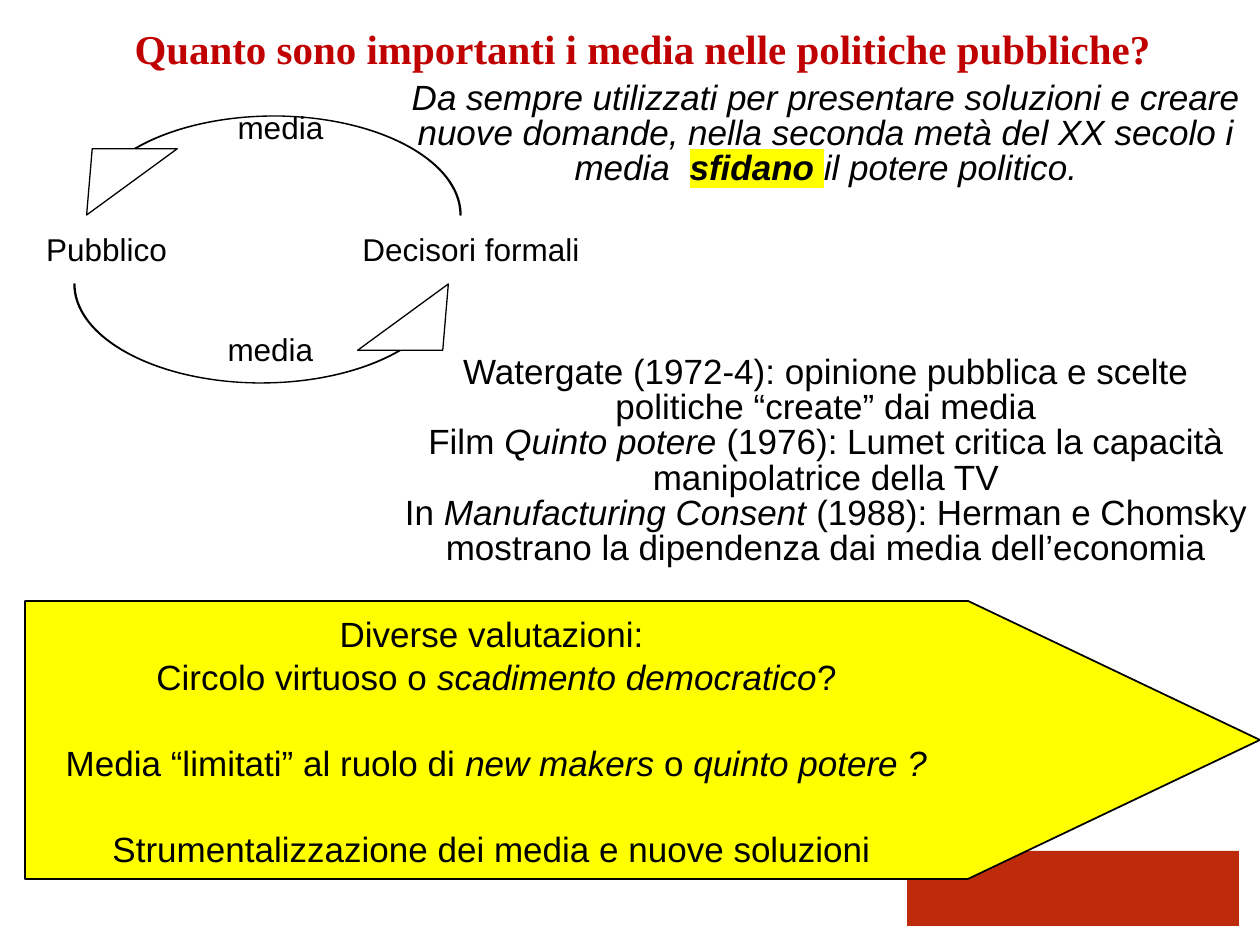
from lxml.etree import SubElement
from pptx import Presentation
from pptx.dml.color import RGBColor as RGB
from pptx.enum.shapes import MSO_SHAPE as SHAPE
from pptx.enum.text import MSO_ANCHOR as ANCHOR, PP_ALIGN as ALIGN
from pptx.oxml.ns import qn
from pptx.util import Pt

PX = 914400 / 126
COLORS = {"ink": "000000", "title": "C00000", "yellow": "FFFF00", "red": "BD2B0B"}


def px(*values):
    return [round(v * PX) for v in values]


def write(sp, paragraphs, color="ink", spacing=None, wrap=True,
          anchor=ANCHOR.TOP, **font):
    """Each paragraph is (space before in pt, [(text, style letters), ...])."""
    tf = sp.text_frame
    tf.word_wrap, tf.vertical_anchor = wrap, anchor
    for i, (before, runs) in enumerate(paragraphs):
        p = tf.paragraphs[0] if i == 0 else tf.add_paragraph()
        p.alignment = ALIGN.CENTER
        if spacing:
            p.line_spacing = spacing
        if before:
            p.space_before = Pt(before)
        for text, style in runs:
            r = p.add_run()
            r.text = text
            r.font.color.rgb = RGB.from_string(COLORS[color])
            if "h" in style:
                mark = SubElement(r.font._element, qn("a:highlight"))
                SubElement(mark, qn("a:srgbClr")).set("val", COLORS["yellow"])
            fmt = {"name": "Arial", "bold": "b" in style, "italic": "i" in style, **font}
            for key, value in fmt.items():
                setattr(r.font, key, value)


prs = Presentation()
prs.slide_width, prs.slide_height = px(1260, 945)
s = prs.slides.add_slide(prs.slide_layouts[6])
shapes = s.shapes

# Red corner block
block = shapes.add_shape(SHAPE.RECTANGLE, *px(907, 851, 332, 75))
block.shadow.inherit = False
block.fill.solid()
block.fill.fore_color.rgb = RGB.from_string(COLORS["red"])
block.line.fill.background()

# Title
title = shapes.add_textbox(*px(25, 14, 1235, 59))
title.text_frame.margin_bottom = 0
write(title, [(0, [("Quanto sono importanti i media nelle politiche pubbliche?", "b")])],
      color="title", anchor=ANCHOR.BOTTOM, name="Times New Roman", size=Pt(23.4))

# Cycle arrows: lower one, then the same turned round above
for x, y, turn in [(74, 284, 0), (44, 116, 180)]:
    arrow = shapes.add_shape(SHAPE.CURVED_UP_ARROW, *px(x, y, 417, 99))
    arrow.shadow.inherit = False
    arrow.rotation = turn
    for i, value in enumerate([0.01, 0.86, 0.67]):
        arrow.adjustments[i] = value
    arrow.fill.background()
    arrow.line.color.rgb = RGB.from_string(COLORS["ink"])
    arrow.line.width = Pt(0.75)

# Cycle labels
for text, x, y, w in [("Pubblico", 0, 224, 213), ("Decisori formali", 292, 224, 358),
                      ("media", 174, 102, 213), ("media", 164, 324, 213)]:
    write(shapes.add_textbox(*px(x, y, w, 63)), [(0, [(text, "")])], size=Pt(18))

# Yellow conclusion arrow
conclusion = shapes.add_shape(SHAPE.RIGHT_ARROW, *px(25, 601, 1235, 278))
conclusion.shadow.inherit = False
conclusion.adjustments[0], conclusion.adjustments[1] = 1, 1.05
conclusion.fill.solid()
conclusion.fill.fore_color.rgb = RGB.from_string(COLORS["yellow"])
conclusion.line.color.rgb = RGB.from_string(COLORS["ink"])
conclusion.line.width = Pt(1)
write(conclusion, [
    (0, [("Diverse valutazioni: ", "")]),
    (0, [("Circolo virtuoso o ", ""), ("scadimento democratico", "i"), ("?", "")]),
    (24, [("Media “limitati” al ruolo di ", ""), ("new makers ", "i"), ("o ", ""),
          ("quinto potere ?", "i")]),
    (24, [("Strumentalizzazione dei media e nuove soluzioni ", "")]),
], spacing=1.04, wrap=False, anchor=ANCHOR.MIDDLE, size=Pt(20))

# Media and power: thesis and examples
write(shapes.add_textbox(*px(392, 76, 868, 518)), [
    (0, [("Da sempre utilizzati per presentare soluzioni e creare nuove domande, "
          "nella seconda metà del XX secolo i media  ", "i"),
         ("sfidano ", "bih"), ("il potere politico.", "i")]),
    (96, [("Watergate (1972-4): opinione pubblica e scelte politiche “create” dai media", "")]),
    (0, [("Film ", ""), ("Quinto potere ", "i"),
         ("(1976): Lumet critica la capacità manipolatrice della TV", "")]),
    (0, [("In ", ""), ("Manufacturing Consent", "i"),
         (" (1988): Herman e Chomsky mostrano la dipendenza dai media dell’economia", "")]),
], spacing=0.84, size=Pt(20))

prs.save("out.pptx")
